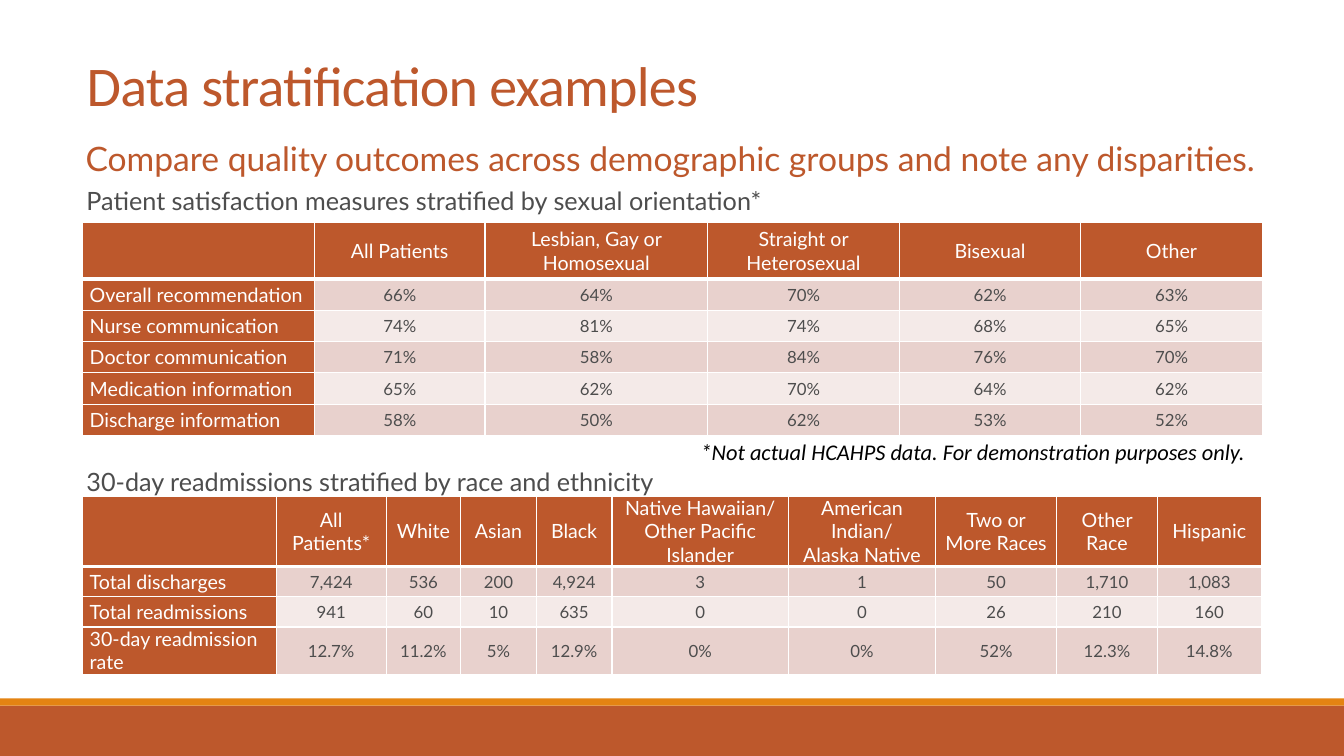
import enum
import pptx
import pptx.dml.color
import pptx.enum.shapes
import pptx.enum.text
import pptx.oxml.ns
import pptx.util
import lxml.etree

Inches, Pt = pptx.util.Inches, pptx.util.Pt
PP_ALIGN, MSO_ANCHOR = pptx.enum.text.PP_ALIGN, pptx.enum.text.MSO_ANCHOR

TITLE = "Data stratification examples"
MESSAGE = "Compare quality outcomes across demographic groups and note any disparities."
FOOTNOTE = "*Not actual HCAHPS data. For demonstration purposes only."

SATISFACTION = {
    "caption": "Patient satisfaction measures stratified by sexual orientation*",
    "top": 2.21,
    "widths": [2.3, 1.69, 2.21, 1.9, 1.8, 1.8],
    "heights": [0.56] + [0.31] * 5,
    "rows": [
        ["", "All Patients", "Lesbian, Gay or Homosexual", "Straight or Heterosexual",
         "Bisexual", "Other"],
        ["Overall recommendation", "66%", "64%", "70%", "62%", "63%"],
        ["Nurse communication", "74%", "81%", "74%", "68%", "65%"],
        ["Doctor communication", "71%", "58%", "84%", "76%", "70%"],
        ["Medication information", "65%", "62%", "70%", "64%", "62%"],
        ["Discharge information", "58%", "50%", "62%", "53%", "52%"],
    ],
}
READMISSIONS = {
    "caption": "30-day readmissions stratified by race and ethnicity",
    "top": 4.92,
    "widths": [1.92, 1.09, 0.74, 0.75, 0.75, 1.75, 1.46, 1.2, 1, 1.03],
    "heights": [0.68] + [0.3] * 3,
    "rows": [
        ["", "All Patients*", "White", "Asian", "Black",
         "Native Hawaiian/\vOther Pacific Islander", "American Indian/\vAlaska Native",
         "Two or\vMore Races", "Other Race", "Hispanic"],
        ["Total discharges", "7,424", "536", "200", "4,924", "3", "1", "50", "1,710", "1,083"],
        ["Total readmissions", "941", "60", "10", "635", "0", "0", "26", "210", "160"],
        ["30-day readmission rate", "12.7%", "11.2%", "5%", "12.9%", "0%", "0%", "52%",
         "12.3%", "14.8%"],
    ],
}


class Theme(enum.Enum):
    RUST = "BD582C"
    ORANGE = "E48312"
    GREY = "4D4D4D"
    BLACK = "000000"
    WHITE = "FFFFFF"
    BAND_DARK = "E8D1CD"
    BAND_LIGHT = "F4EAE8"
    TITLE_SIZE = 40
    MESSAGE_SIZE = 24
    CAPTION_SIZE = 18
    NOTE_SIZE = 16
    HEADING_SIZE = 14
    VALUE_SIZE = 12
    TITLE_FONT = "Calibri"
    BODY_FONT = "Lato"


def rgb(color):
    return pptx.dml.color.RGBColor.from_string(color.value)


def write(tf, text, size, color, font=Theme.BODY_FONT, align=PP_ALIGN.LEFT, spacing=None,
          italic=False):
    tf.text = text
    tf.word_wrap = True
    p = tf.paragraphs[0]
    p.alignment = align
    p.line_spacing = spacing
    for r in p.runs:
        r.font.size = Pt(size.value)
        r.font.name = font.value
        r.font.color.rgb = rgb(color)
        r.font.bold = False
        r.font.italic = italic


def add_box(slide, left, top, width, height, fill):
    sp = slide.shapes.add_shape(pptx.enum.shapes.MSO_SHAPE.RECTANGLE, Inches(left),
                                Inches(top), Inches(width), Inches(height))
    sp.shadow.inherit = False
    sp.fill.solid()
    sp.fill.fore_color.rgb = rgb(fill)
    sp.line.fill.background()
    return sp


def add_text(slide, left, top, width, height, *args, **kwargs):
    tb = slide.shapes.add_textbox(Inches(left), Inches(top), Inches(width), Inches(height))
    write(tb.text_frame, *args, **kwargs)


def set_borders(cell, **widths):
    """Draw white cell edges; keywords L, R, T, B give widths in points."""
    tcPr = cell._tc.get_or_add_tcPr()
    qn = pptx.oxml.ns.qn
    for i, (side, width) in enumerate(widths.items()):
        ln = lxml.etree.Element(qn(f"a:ln{side}"), w=str(Pt(width)))
        fill = lxml.etree.SubElement(ln, qn("a:solidFill"))
        lxml.etree.SubElement(fill, qn("a:srgbClr"), val=Theme.WHITE.value)
        tcPr.insert(i, ln)


def add_data_table(slide, data):
    rows, widths, heights = data["rows"], data["widths"], data["heights"]
    table = slide.shapes.add_table(len(rows), len(widths), Inches(0.82), Inches(data["top"]),
                                   Inches(sum(widths)), Inches(sum(heights))).table
    table.first_row = table.horz_banding = False
    for column, width in zip(table.columns, widths):
        column.width = Inches(width)
    for i, (row, height) in enumerate(zip(rows, heights)):
        table.rows[i].height = Inches(height)
        band = Theme.BAND_DARK if i % 2 else Theme.BAND_LIGHT
        for j, text in enumerate(row):
            cell = table.cell(i, j)
            heading = i == 0 or j == 0
            cell.vertical_anchor = MSO_ANCHOR.MIDDLE
            cell.margin_left = cell.margin_right = Inches(0.07)
            cell.margin_top = cell.margin_bottom = 0
            cell.fill.solid()
            cell.fill.fore_color.rgb = rgb(Theme.RUST if heading else band)
            set_borders(cell, L=1, R=1, T=3 if i == 1 else 1, B=3 if i == 0 else 1)
            write(cell.text_frame, text,
                  Theme.HEADING_SIZE if heading else Theme.VALUE_SIZE,
                  Theme.WHITE if heading else Theme.GREY,
                  align=PP_ALIGN.CENTER if i == 0 or j else PP_ALIGN.LEFT)


def main():
    prs = pptx.Presentation()
    prs.slide_width, prs.slide_height = Inches(13.33), Inches(7.5)
    slide = prs.slides.add_slide(prs.slide_layouts[5])

    add_box(slide, 0, 7, 13.33, 0.5, Theme.RUST)
    add_box(slide, 0, 6.93, 13.33, 0.07, Theme.ORANGE)

    title = slide.shapes.title
    title.left, title.top = Inches(0.76), Inches(0.31)
    title.width, title.height = Inches(11.5), Inches(0.91)
    tf = title.text_frame
    write(tf, TITLE, Theme.TITLE_SIZE, Theme.RUST, Theme.TITLE_FONT, spacing=0.85)
    tf.auto_size = pptx.enum.text.MSO_AUTO_SIZE.NONE
    tf.vertical_anchor = MSO_ANCHOR.BOTTOM
    tf.paragraphs[0].runs[0].font._element.set("spc", "-50")

    panel = add_box(slide, 0.75, 1.12, 12.17, 5.6, Theme.WHITE)
    panel.text_frame.vertical_anchor = MSO_ANCHOR.TOP
    write(panel.text_frame, MESSAGE, Theme.MESSAGE_SIZE, Theme.RUST, spacing=1.5)

    add_text(slide, 0.76, 1.79, 11.63, 0.4, SATISFACTION["caption"],
             Theme.CAPTION_SIZE, Theme.GREY)
    add_data_table(slide, SATISFACTION)
    add_data_table(slide, READMISSIONS)
    add_text(slide, 0.76, 4.43, 11.63, 0.5, READMISSIONS["caption"],
             Theme.CAPTION_SIZE, Theme.GREY, spacing=1.5)
    add_text(slide, 6.85, 4.3, 5.66, 0.37, FOOTNOTE, Theme.NOTE_SIZE, Theme.BLACK,
             Theme.TITLE_FONT, italic=True)

    prs.save("out.pptx")


if __name__ == "__main__":
    main()
